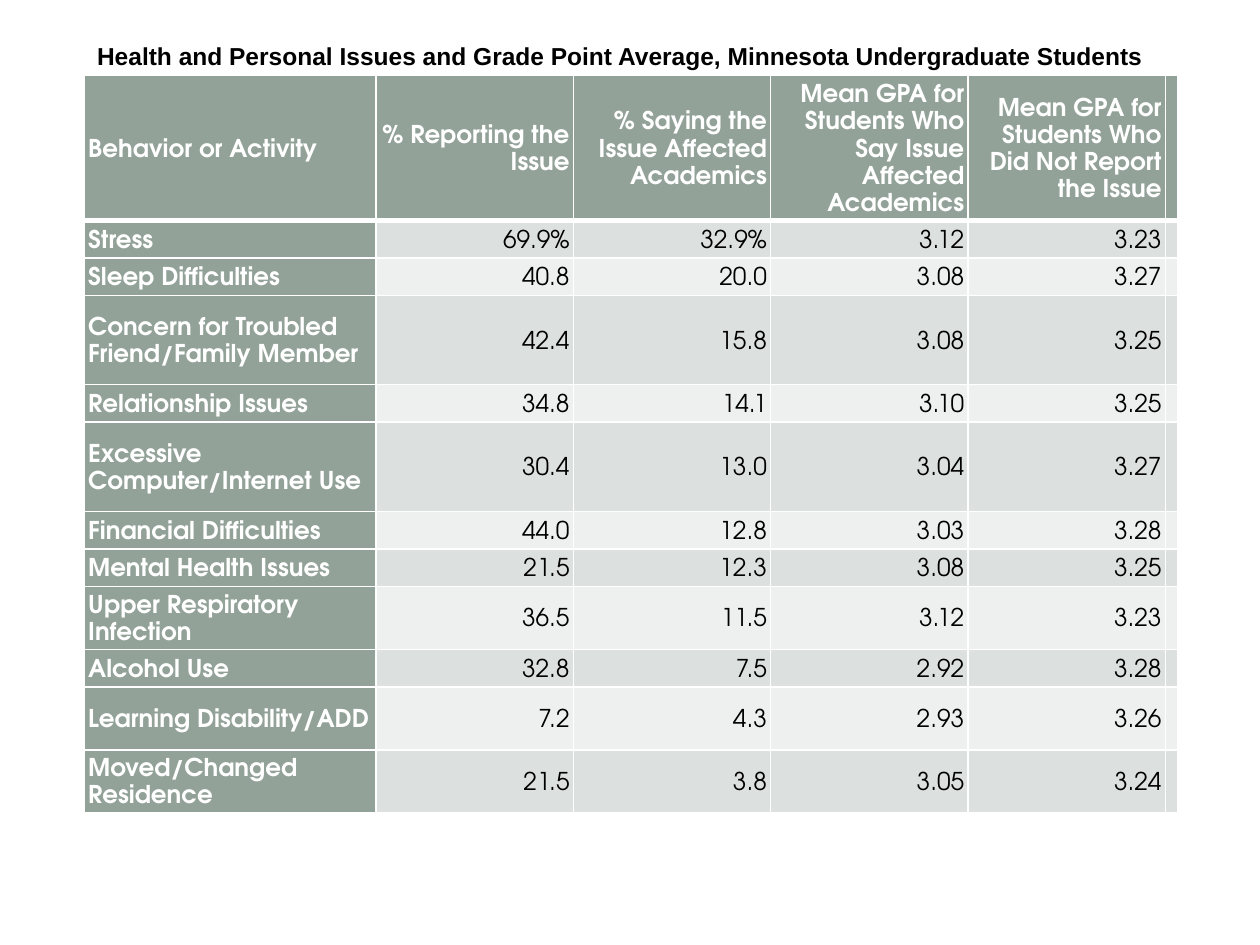
import pptx
import pptx.dml.color
import pptx.enum.text
import pptx.util
from lxml import etree
from pptx.oxml.ns import qn

INCH = pptx.util.Inches
ALIGN = pptx.enum.text.PP_ALIGN
MIDDLE = pptx.enum.text.MSO_ANCHOR.MIDDLE
SAGE, WHITE, BLACK = "93A299", "FFFFFF", "000000"
BANDS = ["DCE0DE", "EEF0EF"]

TITLE = ("Health and Personal Issues and Grade Point Average, "
         "Minnesota Undergraduate Students")
HEADS = ["Behavior or Activity", "% Reporting the Issue",
         "% Saying the Issue Affected Academics",
         "Mean GPA for Students Who Say Issue Affected Academics",
         "Mean GPA for Students Who Did Not Report the Issue", ""]
# Row height in inches, then the cells
LOW, MID, TALL = 0.29, 0.5, 0.71
ISSUES = [
    (LOW, "Stress", "69.9%", "32.9%", "3.12", "3.23"),
    (LOW, "Sleep Difficulties", "40.8", "20.0", "3.08", "3.27"),
    (TALL, "Concern for Troubled Friend/Family Member",
     "42.4", "15.8", "3.08", "3.25"),
    (LOW, "Relationship Issues", "34.8", "14.1", "3.10", "3.25"),
    (TALL, "Excessive Computer/Internet Use",
     "30.4", "13.0", "3.04", "3.27"),
    (LOW, "Financial Difficulties", "44.0", "12.8", "3.03", "3.28"),
    (LOW, "Mental Health Issues", "21.5", "12.3", "3.08", "3.25"),
    (MID, "Upper Respiratory Infection", "36.5", "11.5", "3.12", "3.23"),
    (LOW, "Alcohol Use", "32.8", "7.5", "2.92", "3.28"),
    (MID, "Learning Disability/ADD", "7.2", "4.3", "2.93", "3.26"),
    (MID, "Moved/Changed Residence", "21.5", "3.8", "3.05", "3.24"),
]


def color(code):
    return pptx.dml.color.RGBColor.from_string(code)


def style(font, face, code, bold):
    font.name, font.size, font.bold = face, pptx.util.Pt(14), bold
    font.color.rgb = color(code)


def edge(cell, side, width):
    """Draw one white cell border."""
    line = etree.SubElement(cell._tc.get_or_add_tcPr(), qn("a:ln" + side),
                            w=str(pptx.util.Pt(width)))
    fill = etree.SubElement(line, qn("a:solidFill"))
    etree.SubElement(fill, qn("a:srgbClr"), val=WHITE)


def fill_cell(cell, text, row, col):
    head, label = row == 0, col == 0
    # Borders, with a heavy rule under the header
    for side in "LRTB":
        heavy = (side == "B" and head) or (side == "T" and row == 1)
        edge(cell, side, 3 if heavy else 1)
    cell.fill.solid()
    cell.fill.fore_color.rgb = color(
        SAGE if head or label else BANDS[(row - 1) % 2])
    # Text
    cell.margin_left = cell.margin_right = INCH(0.03)
    cell.margin_top = cell.margin_bottom = INCH(0.03)
    cell.vertical_anchor = MIDDLE
    cell.text_frame.text = text
    para = cell.text_frame.paragraphs[0]
    para.alignment = ALIGN.LEFT if label else ALIGN.RIGHT
    para.line_spacing = 1.2
    for run in para.runs:
        style(run.font, "TeX Gyre Adventor",
              WHITE if head or label else BLACK, head or label)
    if not text:
        # Keep the empty cells from stretching their rows
        etree.SubElement(para._p, qn("a:endParaRPr"), sz="1400")


def add_title(slide, left, top, width, height):
    title = slide.shapes.title
    title.left, title.top = left, top
    title.width, title.height = width, height
    frame = title.text_frame
    frame.text = TITLE
    frame.word_wrap = False
    frame.vertical_anchor = MIDDLE
    para = frame.paragraphs[0]
    para.alignment = ALIGN.LEFT
    style(para.runs[0].font, "Arial", BLACK, True)


def add_grid(slide, left, top, width):
    rows = [HEADS] + [[*cells, ""] for _, *cells in ISSUES]
    highs = [1.15] + [issue[0] for issue in ISSUES]
    shares = [2.32] + [1.57] * 4 + [0.09]
    table = slide.shapes.add_table(len(rows), len(HEADS), left, top,
                                   width, INCH(sum(highs))).table
    for col, share in zip(table.columns, shares):
        col.width = int(width * share / sum(shares))
    for row, high in zip(table.rows, highs):
        row.height = INCH(high)
    for r, texts in enumerate(rows):
        for c, text in enumerate(texts):
            fill_cell(table.cell(r, c), text, r, c)


def main():
    deck = pptx.Presentation()
    deck.slide_width, deck.slide_height = INCH(10), INCH(7.5)
    slide = deck.slides.add_slide(deck.slide_layouts[5])
    add_title(slide, INCH(0.67), INCH(0.27), INCH(8.54), INCH(0.34))
    add_grid(slide, INCH(0.67), INCH(0.6), INCH(8.67))
    deck.save("out.pptx")


if __name__ == "__main__":
    main()
